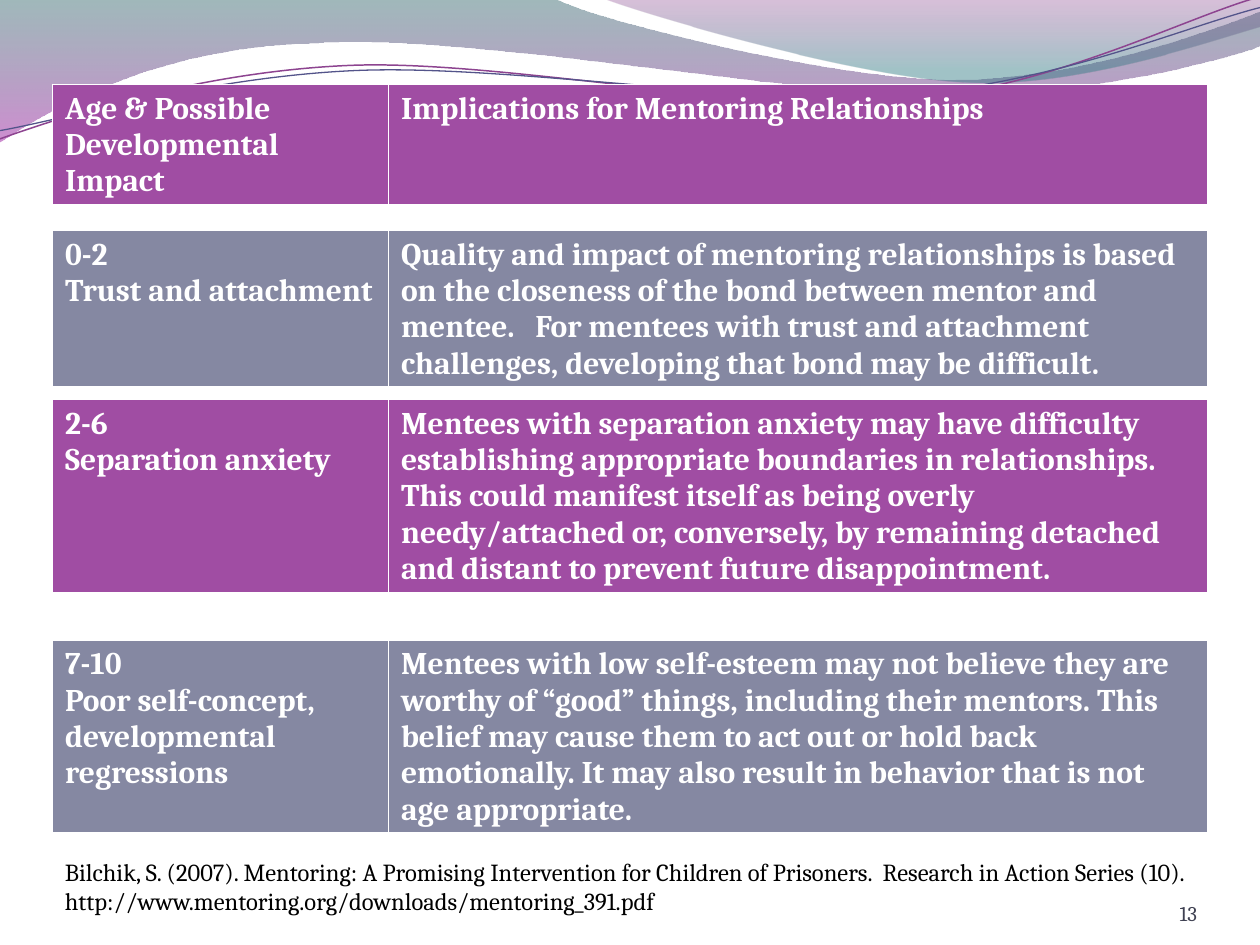
from dataclasses import dataclass

from lxml.etree import SubElement
from pptx import Presentation
from pptx.dml.color import RGBColor
from pptx.enum.text import MSO_ANCHOR as Anchor, PP_ALIGN as Align
from pptx.oxml.ns import qn
from pptx.util import Inches, Pt

COLORS = {
    "purple": "A04DA3", "slate": "8588A2", "white": "FFFFFF", "black": "000000",
    "number": "3F4152", "teal": "2D6368", "violet": "A530A9", "plum": "7F2F82",
    "aqua": "2F7B82", "line_purple": "8D4490", "line_indigo": "53548A",
}
FONT = "Cambria"
TABLE_LEFT = 5 / 12
COLUMN_WIDTHS = (8 / 3, 6.5)
BORDERS = {"a:lnL": 1, "a:lnR": 1, "a:lnT": 1, "a:lnB": 3}

Point = tuple[float, float]


@dataclass
class Stop:
    position: float
    color: str
    opacity: int


@dataclass
class Wave:
    """Segments hold one point for a line and three for a Bezier curve."""
    start: Point
    segments: list[tuple[Point, ...]]
    stops: tuple[Stop, ...] = ()
    line_color: str = ""
    line_width: float = 0


@dataclass
class Band:
    """The row is a minimum that grows with its text inside the frame."""
    top: float
    frame_height: float
    row_height: float
    color: str
    stage: str
    implication: str


WAVES = [
    Wave((0, 0), [
        ((4.4, -0.01),),
        ((4.76, 0.17), (6.64, 0.63), (7.58, 0.63)),
        ((8.53, 0.63), (9.58, 0.26), (10, 0.09)),
        ((10.01, 0.36),),
        ((9.83, 0.44), (8.7, 0.76), (7.46, 0.75)),
        ((6.22, 0.75), (3.82, 0.28), (2.57, 0.34)),
        ((1.29, 0.36), (0.46, 0.83), (-0.01, 1.13)),
        ((0, 0),),
    ], stops=(Stop(0, "teal", 45), Stop(1, "violet", 55))),
    Wave((4.79, -0.01), [
        ((5.09, 0.11), (6.82, 0.62), (7.69, 0.65)),
        ((8.56, 0.69), (9.61, 0.32), (10, 0.21)),
        ((10, 0),),
        ((4.79, -0.01),),
    ], stops=(Stop(0, "plum", 30), Stop(0.8, "aqua", 45))),
    Wave((-0.02, 1.11), [
        ((0.48, 0.93), (1.58, 0.57), (2.77, 0.52)),
        ((3.95, 0.47), (5.93, 0.89), (7.13, 0.8)),
        ((8.33, 0.71), (9.38, 0.15), (9.98, -0.02)),
    ], line_color="line_purple", line_width=0.85),
    Wave((-0.02, 1.04), [
        ((0.47, 0.96), (1.64, 0.61), (2.83, 0.56)),
        ((4.03, 0.51), (5.97, 0.84), (7.17, 0.75)),
        ((8.36, 0.67), (9.41, 0.21), (10, 0.06)),
    ], line_color="line_indigo", line_width=0.75),
]

BANDS = [
    Band(1.83, 1.3, 1.14, "slate", "0-2\nTrust and attachment",
         "Quality and impact of mentoring relationships is based on the closeness of "
         "the bond between mentor and mentee.   For mentees with trust and attachment "
         "challenges, developing that bond may be difficult."),
    Band(3.17, 1.9, 1.42, "purple", "2-6\nSeparation anxiety",
         "Mentees with separation anxiety may have difficulty establishing appropriate "
         "boundaries in relationships. This could manifest itself as being overly "
         "needy/attached or, conversely, by remaining detached and distant to prevent "
         "future disappointment."),
    Band(0.67, 1, 0.71, "purple", "Age & Possible Developmental Impact",
         "Implications for Mentoring Relationships"),
    Band(5.08, 1.6, 1.25, "slate",
         "7-10\nPoor self-concept,\ndevelopmental\nregressions",
         "Mentees with low self-esteem may not believe they are worthy of “good” "
         "things, including their mentors. This belief may cause them to act out or "
         "hold back emotionally. It may also result in behavior that is not age "
         "appropriate."),
]

CITATION = ("Bilchik, S. (2007). Mentoring: A Promising Intervention for Children of "
            "Prisoners.  Research in Action Series (10). "
            "http://www.mentoring.org/downloads/mentoring_391.pdf")


def rgb(name: str) -> RGBColor:
    return RGBColor.from_string(COLORS[name])


def write_text(frame, text: str, color: str, size: int, bold: bool = False,
               align=Align.LEFT) -> None:
    frame.text = text
    font_format = {"name": FONT, "size": Pt(size), "bold": bold}
    for paragraph in frame.paragraphs:
        paragraph.alignment = align
        for run in paragraph.runs:
            for attribute, value in font_format.items():
                setattr(run.font, attribute, value)
            run.font.color.rgb = rgb(color)


def bend_segments(shape, segments: list[tuple[Point, ...]]) -> None:
    """Join each run of three line points into one Bezier curve."""
    lines = iter(list(shape.element.iter(qn("a:lnTo"))))
    for segment in segments:
        first, *others = [next(lines) for _ in segment]
        if others:
            first.tag = qn("a:cubicBezTo")
            for line in others:
                first.append(line[0])
                line.getparent().remove(line)


def add_wave(slide, wave: Wave) -> None:
    points = [wave.start, *(point for segment in wave.segments for point in segment)]
    vertices = [(Inches(x), Inches(y)) for x, y in points]
    builder = slide.shapes.build_freeform(*vertices[0])
    builder.add_line_segments(vertices[1:], close=bool(wave.stops))
    shape = builder.convert_to_shape()
    bend_segments(shape, wave.segments)
    shape.shadow.inherit = False
    if not wave.stops:
        shape.fill.background()
        shape.line.color.rgb = rgb(wave.line_color)
        shape.line.width = Pt(wave.line_width)
        return
    shape.line.fill.background()
    shape.fill.gradient()
    shape.fill.gradient_angle = 270  # top to bottom
    for target, stop in zip(shape.fill.gradient_stops, wave.stops):
        target.position = stop.position
        target.color.rgb = rgb(stop.color)
    for element, stop in zip(shape.element.iter(qn("a:gs")), wave.stops):
        SubElement(element[0], qn("a:alpha"), val=str(stop.opacity * 1000))


def add_borders(cell) -> None:
    properties = cell._tc.get_or_add_tcPr()
    for tag, width in BORDERS.items():
        line = SubElement(properties, qn(tag), w=str(Pt(width)))
        fill = SubElement(line, qn("a:solidFill"))
        SubElement(fill, qn("a:srgbClr"), val=COLORS["white"])


def add_band(slide, band: Band) -> None:
    shape = slide.shapes.add_table(
        1, len(COLUMN_WIDTHS), Inches(TABLE_LEFT), Inches(band.top),
        Inches(sum(COLUMN_WIDTHS)), Inches(band.frame_height))
    table = shape.table
    table.first_row = table.horz_banding = False
    table.rows[0].height = Inches(band.row_height)
    for index, text in enumerate((band.stage, band.implication)):
        table.columns[index].width = Inches(COLUMN_WIDTHS[index])
        cell = table.cell(0, index)
        add_borders(cell)
        cell.fill.solid()
        cell.fill.fore_color.rgb = rgb(band.color)
        write_text(cell.text_frame, text, "white", 18, bold=True)
    shape.height = Inches(band.frame_height)


def add_text(slide, box: tuple[float, ...], text: str, color: str, size: int,
             align=Align.LEFT, **frame_format) -> None:
    frame = slide.shapes.add_textbox(*map(Inches, box)).text_frame
    for attribute, value in {"word_wrap": True, **frame_format}.items():
        setattr(frame, attribute, value)
    write_text(frame, text, color, size, align=align)


def main() -> None:
    presentation = Presentation()
    presentation.slide_width, presentation.slide_height = Inches(10), Inches(7.5)
    slide = presentation.slides.add_slide(presentation.slide_layouts[6])

    # Wave decoration along the top
    for wave in WAVES:
        add_wave(slide, wave)

    # Header and age bands
    for band in BANDS:
        add_band(slide, band)

    # Citation and slide number
    add_text(slide, (TABLE_LEFT, 6.75, 9.25, 0.57), CITATION, "black", 14)
    add_text(slide, (8.67, 6.95, 0.83, 0.4), "13", "number", 12, align=Align.RIGHT,
             vertical_anchor=Anchor.BOTTOM, margin_left=0, margin_right=0,
             margin_top=0, margin_bottom=0)

    presentation.save("out.pptx")


if __name__ == "__main__":
    main()
